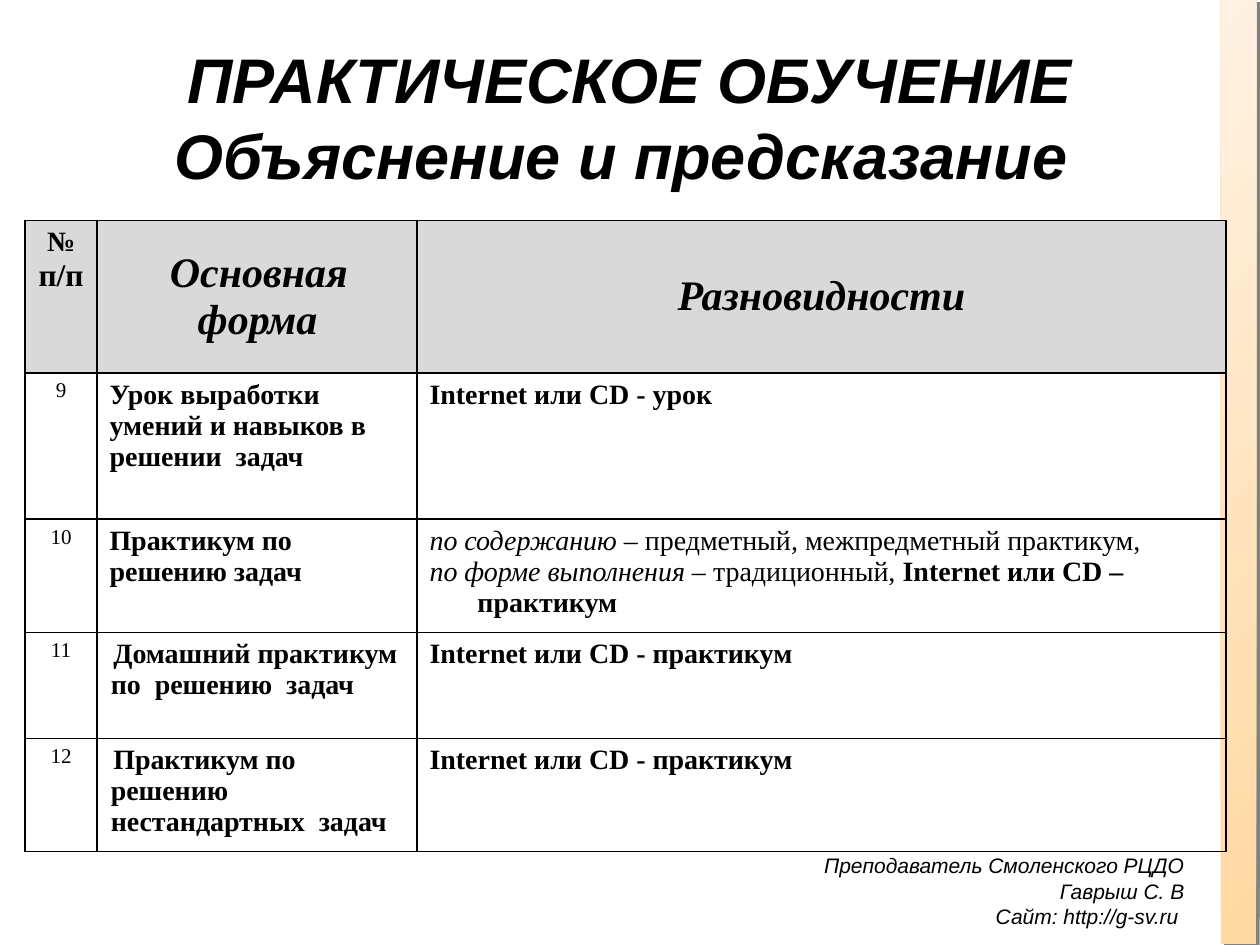
from lxml import etree
from pptx import Presentation
from pptx import util as u
from pptx.dml.color import RGBColor
from pptx.enum import shapes, text
from pptx.oxml.ns import qn

COLORS = {"ink": "000000", "header": "D9D9D9", "shadow": "808080",
          "strip_dark": "FFD8A0", "strip_light": "FFF2E3"}
HANGING, SLIGHT, PLAIN = (0.38, -0.38), (0.01, 0.02), (0, 0)
LEFT, CENTER, RIGHT = text.PP_ALIGN.LEFT, text.PP_ALIGN.CENTER, text.PP_ALIGN.RIGHT
TOP, MIDDLE = text.MSO_ANCHOR.TOP, text.MSO_ANCHOR.MIDDLE


def color(name):
    return RGBColor.from_string(COLORS[name])


def write(frame, lines, font, align=LEFT, indent=PLAIN):
    """Fill a text frame; each line is a list of (words, size, style letters)."""
    for number, spans in enumerate(lines):
        para = frame.add_paragraph() if number else frame.paragraphs[0]
        para.alignment = align
        margin, first = (str(u.Inches(length)) for length in indent)
        properties = para._p.get_or_add_pPr()
        properties.set("marL", margin)
        properties.set("indent", first)
        for words, size, style in spans:
            span = para.add_run()
            span.text = words
            span.font.color.rgb = color("ink")
            look = {"name": font, "size": u.Pt(size), "bold": "b" in style, "italic": "i" in style}
            for key, value in look.items():
                setattr(span.font, key, value)


deck = Presentation()
deck.slide_width, deck.slide_height = u.Inches(10), u.Inches(7.5)
page = deck.slides.add_slide(deck.slide_layouts[6])

# Strip along the right edge
strip = page.shapes.add_shape(shapes.MSO_SHAPE.RECTANGLE, u.Inches(9.69), u.Inches(-0.01),
                              u.Inches(0.28), deck.slide_height)
strip.fill.gradient()
strip.fill.gradient_angle = 135
for stop, name in zip(strip.fill.gradient_stops, ("strip_dark", "strip_light")):
    stop.color.rgb = color(name)
strip.line.fill.background()
strip.shadow.inherit = False
effects = strip._element.spPr.find(qn("a:effectLst"))
shade = etree.SubElement(effects, qn("a:outerShdw"), dist=str(u.Pt(2.8)), dir="2700000",
                         algn="ctr", rotWithShape="0")
etree.SubElement(shade, qn("a:srgbClr"), val=COLORS["shadow"])

# Title and footer
text_boxes = [
    ((0.5, 0.3, 9, 1.25), MIDDLE, CENTER,
     [[("ПРАКТИЧЕСКОЕ ОБУЧЕНИЕ Объяснение и предсказание ", 36, "bi")]]),
    ((6.33, 6.72, 3.17, 0.6), TOP, RIGHT,
     [[("Преподаватель Смоленского РЦДО Гаврыш С. В", 12, "i")],
      [("Сайт: http://g-sv.ru ", 12, "i")]]),
]
for place, anchor, align, lines in text_boxes:
    box = page.shapes.add_textbox(*map(u.Inches, place))
    box.text_frame.word_wrap = True
    box.text_frame.vertical_anchor = anchor
    write(box.text_frame, lines, "Arial", align)

# Table of lesson forms: number, main form, its indent, varieties
lessons = [
    ("9", "Урок выработки умений и навыков в решении\u00a0 задач", PLAIN,
     [[("Internet или СD - урок", 16, "b")]]),
    ("10", "Практикум по решению задач", PLAIN,
     [[("по содержанию ", 16, "i"), ("– предметный", 16, ""), (", ", 16, "i"),
       ("межпредметный практикум,", 16, "")],
      [("по форме выполнения –", 16, "i"), (" традиционный, ", 16, ""),
       ("Internet или СD –практикум", 16, "b")]]),
    ("11", "Домашний практикум по\u00a0 решению\u00a0 задач", SLIGHT,
     [[("Internet или СD - практикум", 16, "b")]]),
    ("12", "Практикум по решению нестандартных\u00a0 задач", SLIGHT,
     [[("Internet или СD - практикум", 16, "b")]]),
]
# Each cell: lines, alignment, indent, anchor
rows = [[([[("№", 16, "b")], [("п/п", 18, "b")]], CENTER, HANGING, TOP),
         ([[("Основная форма", 24, "bi")]], CENTER, SLIGHT, MIDDLE),
         ([[("Разновидности", 24, "bi")]], CENTER, PLAIN, MIDDLE)]]
for number, form, indent, varieties in lessons:
    rows.append([([[(number, 12, "")]], CENTER, HANGING, TOP),
                 ([[(form, 16, "b")]], LEFT, indent, TOP),
                 (varieties, LEFT, HANGING, TOP)])

widths, heights = (0.57, 2.54, 6.42), (1.21, 1.16, 0.84, 0.84, 0.84)
grid = page.shapes.add_table(len(heights), len(widths), u.Inches(0.2), u.Inches(1.75),
                             u.Inches(sum(widths)), u.Inches(sum(heights))).table
grid.first_row = grid.horz_banding = False
for column, width in zip(grid.columns, widths):
    column.width = u.Inches(width)
for row, height in zip(grid.rows, heights):
    row.height = u.Inches(height)

for r, row in enumerate(rows):
    for c, (lines, align, indent, anchor) in enumerate(row):
        cell = grid.cell(r, c)
        cell.vertical_anchor = anchor
        write(cell.text_frame, lines, "Times New Roman", align, indent)
        properties = cell._tc.get_or_add_tcPr()
        for side in ("lnL", "lnR", "lnT", "lnB"):
            border = etree.SubElement(properties, qn(f"a:{side}"), w=str(u.Pt(1)))
            paint = etree.SubElement(border, qn("a:solidFill"))
            etree.SubElement(paint, qn("a:srgbClr"), val=COLORS["ink"])
        if r == 0:
            cell.fill.solid()
            cell.fill.fore_color.rgb = color("header")
        else:
            cell.fill.background()

deck.save("out.pptx")
